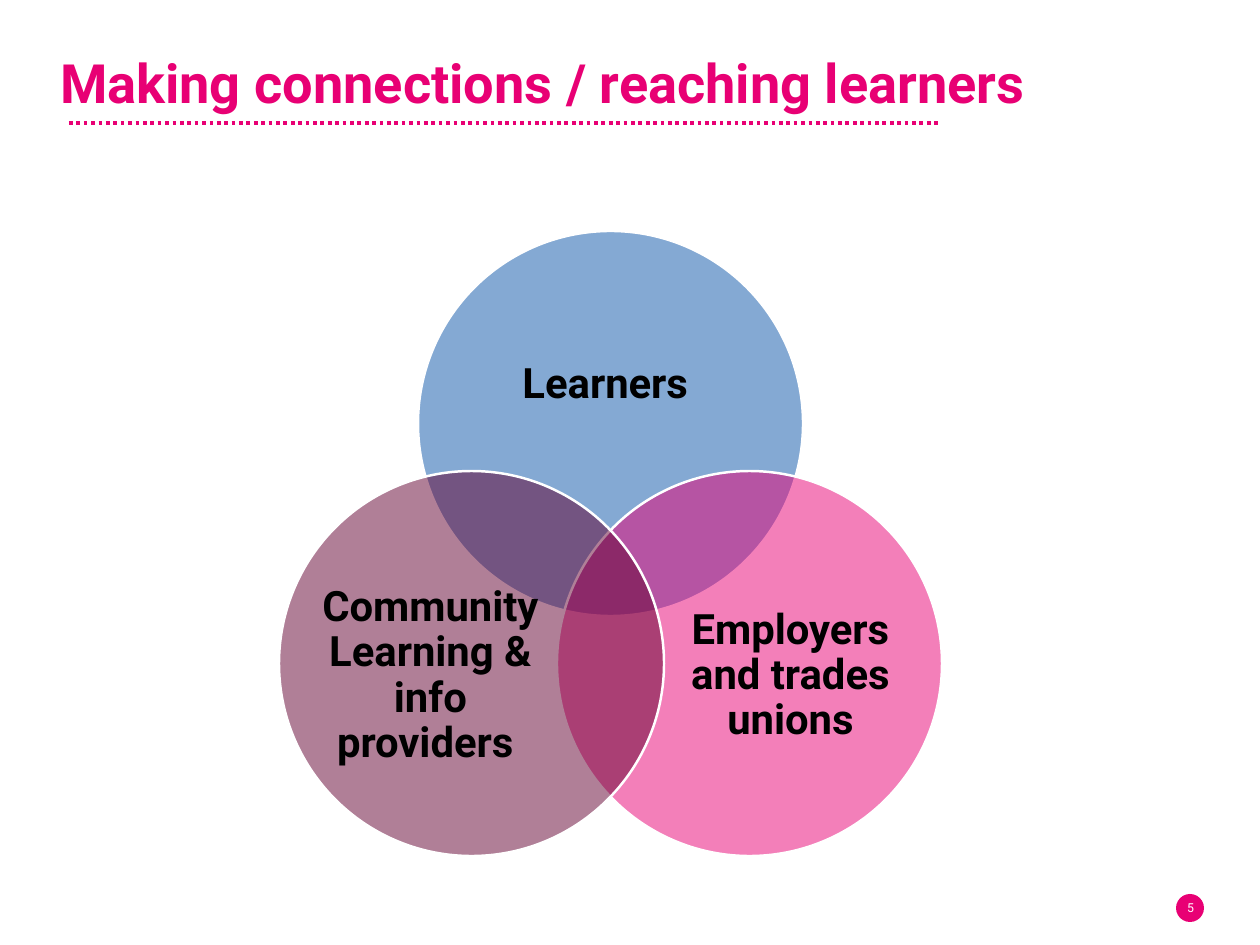
"""Build a slide with a three-circle diagram of learner connections."""
from lxml import etree
from pptx import Presentation
from pptx.dml.color import RGBColor
from pptx.enum.dml import MSO_LINE
from pptx.enum.shapes import MSO_CONNECTOR, MSO_SHAPE
from pptx.enum.text import MSO_ANCHOR, MSO_AUTO_SIZE, PP_ALIGN
from pptx.oxml.ns import qn
from pptx.util import Pt

OVAL, STRAIGHT, DOTTED = MSO_SHAPE.OVAL, MSO_CONNECTOR.STRAIGHT, MSO_LINE.ROUND_DOT
TOP, MIDDLE = MSO_ANCHOR.TOP, MSO_ANCHOR.MIDDLE
LEFT, CENTER = PP_ALIGN.LEFT, PP_ALIGN.CENTER
NO_FIT = MSO_AUTO_SIZE.NONE

EMU_PER_PX = 10320
SLIDE_SIZE = (1260, 945)
TITLE = "Making connections / reaching learners"
TITLE_BOX = (60, 50, 1092, 80)
RULE = (69, 123, 941, 123)
PAGE_NUMBER = "5"
PAGE_DOT = (1176, 894, 28, 28)
PAGE_BOX = (1166, 882, 49, 51)

DIAMETER = 385
TOP_CIRCLE = (418, 231)
SIDE_SHIFT, DROP = 139, 240
CIRCLES = [
    {"text": "Learners ", "color": "blue", "step": (0, 0), "label": (51, 67, 283, 174)},
    {"text": "Employers and trades unions", "color": "pink", "step": (1, 1),
     "label": (118, 99, 231, 212)},
    {"text": "Community Learning & info providers ", "color": "plum", "step": (-1, 1),
     "label": (36, 99, 231, 212)},
]

THEME = {
    "font": "Roboto",
    "colors": {"pink": "E80074", "blue": "0B55A8", "plum": "630031",
               "white": "FFFFFF", "black": "000000"},
    "title": {"size": Pt(44), "bold": True, "color": "pink"},
    "label": {"size": Pt(34), "bold": True, "color": "black"},
    "page": {"size": Pt(10), "bold": False, "color": "white"},
    "circle_opacity": 50,
    "circle_line": Pt(2),
    "rule_line": Pt(3),
}


def emu(lengths):
    return [length * EMU_PER_PX for length in lengths]


def color(name):
    return RGBColor.from_string(THEME["colors"][name])


def set_values(target, values):
    for name, value in values.items():
        setattr(target, name, value)


def write_text(shape, text, style, anchor, paragraph_format):
    frame = shape.text_frame
    set_values(frame, {"word_wrap": True, "auto_size": NO_FIT, "vertical_anchor": anchor,
                       "margin_left": 0, "margin_right": 0,
                       "margin_top": 0, "margin_bottom": 0})
    paragraph = frame.paragraphs[0]
    set_values(paragraph, paragraph_format)
    run = paragraph.add_run()
    run.text = text
    set_values(run.font, {"name": THEME["font"], "size": THEME[style]["size"],
                          "bold": THEME[style]["bold"]})
    run.font.color.rgb = color(THEME[style]["color"])


def add_circle(slide, box, fill):
    circle = slide.shapes.add_shape(OVAL, *emu(box))
    circle.shadow.inherit = False
    circle.fill.solid()
    circle.fill.fore_color.rgb = color(fill)
    circle.line.fill.background()
    return circle


def add_page_mark(slide):
    add_circle(slide, PAGE_DOT, "pink")
    number = slide.shapes.add_textbox(*emu(PAGE_BOX))
    write_text(number, PAGE_NUMBER, "page", MIDDLE, {"alignment": CENTER})


def add_rule(slide):
    rule = slide.shapes.add_connector(STRAIGHT, *emu(RULE))
    rule.line.color.rgb = color("pink")
    set_values(rule.line, {"width": THEME["rule_line"], "dash_style": DOTTED})
    etree.SubElement(rule.element.spPr, qn("a:effectLst"))


def add_title(slide):
    title = slide.shapes.title
    set_values(title, dict(zip(("left", "top", "width", "height"), emu(TITLE_BOX))))
    write_text(title, TITLE, "title", TOP, {"alignment": LEFT, "line_spacing": Pt(52)})


def add_diagram(slide):
    for item in CIRCLES:
        left = TOP_CIRCLE[0] + item["step"][0] * SIDE_SHIFT
        top = TOP_CIRCLE[1] + item["step"][1] * DROP
        circle = add_circle(slide, (left, top, DIAMETER, DIAMETER), item["color"])
        fill_color = circle.element.spPr.find(qn("a:solidFill"))[0]
        alpha = etree.SubElement(fill_color, qn("a:alpha"))
        alpha.set("val", str(THEME["circle_opacity"] * 1000))
        circle.line.color.rgb = color("white")
        circle.line.width = THEME["circle_line"]
        x, y, width, height = item["label"]
        label = slide.shapes.add_textbox(*emu((left + x, top + y, width, height)))
        write_text(label, item["text"], "label", MIDDLE,
                   {"alignment": CENTER, "line_spacing": 0.9, "space_after": Pt(14)})


def main():
    presentation = Presentation()
    presentation.slide_width, presentation.slide_height = emu(SLIDE_SIZE)
    slide = presentation.slides.add_slide(presentation.slide_layouts[5])
    add_page_mark(slide)
    add_rule(slide)
    add_title(slide)
    add_diagram(slide)
    presentation.save("out.pptx")


if __name__ == "__main__":
    main()
